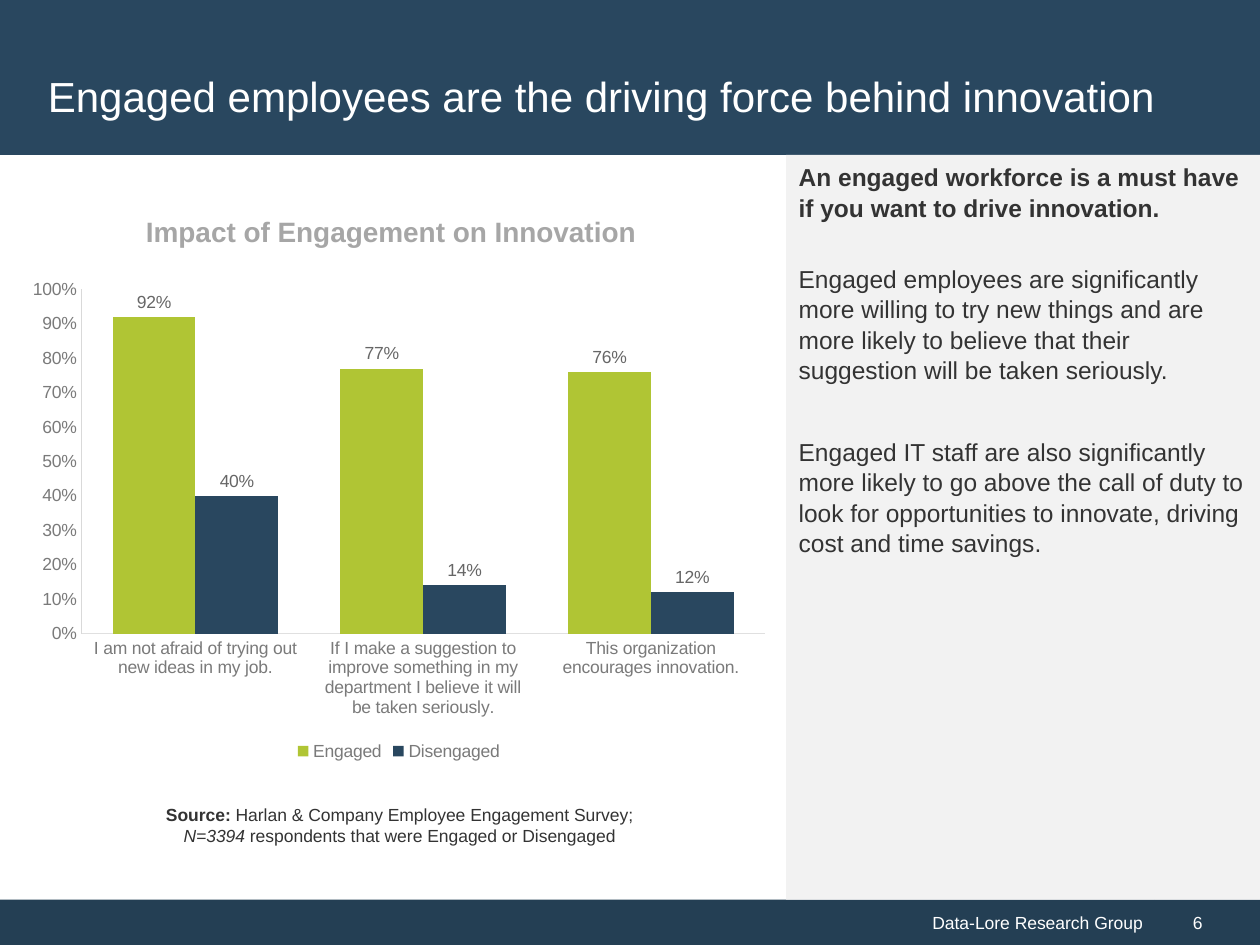
from pptx import Presentation
from pptx.chart.data import CategoryChartData
from pptx.dml.color import RGBColor
from pptx.enum.chart import XL_CHART_TYPE, XL_LABEL_POSITION, XL_LEGEND_POSITION, XL_TICK_MARK
from pptx.enum.shapes import MSO_SHAPE
from pptx.enum.text import MSO_ANCHOR, PP_ALIGN
from pptx.util import Inches, Pt

FONT = "Arial"
WIDTH, HEIGHT = 10, 7.5
HEADER_H, FOOTER_H = 1.23, 0.36
SIDEBAR_X = 6.24
NAVY, DARK_NAVY, GREEN = "29475F", "243F54", "B0C534"
WHITE, PALE, TEXT, AXIS_TEXT = "FFFFFF", "F2F2F2", "333333", "7A7A7A"


def color(hex_value):
    return RGBColor.from_string(hex_value)


def set_font(font, size, hex_value, bold=False, italic=False):
    font.name, font.size = FONT, Pt(size)
    font.bold, font.italic = bold, italic
    font.color.rgb = color(hex_value)


def write(tf, *runs, size=10, hex_value=TEXT, bold=False, align=PP_ALIGN.LEFT,
          anchor=MSO_ANCHOR.TOP, after=0, line=None, new=False):
    """Write one paragraph; a run is text or (text, format overrides)."""
    tf.word_wrap = True
    tf.vertical_anchor = anchor
    p = tf.add_paragraph() if new else tf.paragraphs[0]
    p.alignment, p.space_after, p.line_spacing = align, Pt(after), line
    for run in runs:
        text, extra = (run, {}) if isinstance(run, str) else run
        r = p.add_run()
        r.text = text
        set_font(r.font, size, hex_value, **{"bold": bold, **extra})


def add_panel(s, box, fill):
    sp = s.shapes.add_shape(MSO_SHAPE.RECTANGLE, *map(Inches, box))
    sp.shadow.inherit = False
    sp.fill.solid()
    sp.fill.fore_color.rgb = color(fill)
    sp.line.fill.background()
    return sp


def add_text(s, box, *runs, **fmt):
    tf = s.shapes.add_textbox(*map(Inches, box)).text_frame
    write(tf, *runs, **fmt)


def add_header(s, box, text):
    x, y, w, h = box
    add_panel(s, box, NAVY)
    title = s.shapes.title
    s.shapes._spTree.append(title._element)  # bring in front of the band
    title.left, title.top, title.width, title.height = map(
        Inches, (x + 0.28, y + 0.28, w - 0.57, h - 0.27))
    write(title.text_frame, text, size=24, hex_value=WHITE, anchor=MSO_ANCHOR.MIDDLE)


def add_footer(s, box, owner, number):
    x, y, w, h = box
    split = w * 11 / 12
    name_tf = add_panel(s, (x, y, split, h), DARK_NAVY).text_frame
    write(name_tf, owner, hex_value=WHITE, align=PP_ALIGN.RIGHT, anchor=MSO_ANCHOR.MIDDLE)
    number_tf = add_panel(s, (x + split, y, w - split, h), DARK_NAVY).text_frame
    number_tf.margin_left = Inches(0.3)
    write(number_tf, number, hex_value=WHITE, anchor=MSO_ANCHOR.MIDDLE)


def add_sidebar(s, box, paragraphs):
    tf = add_panel(s, box, PALE).text_frame
    for i, (text, bold, after) in enumerate(paragraphs):
        write(tf, text, size=14, bold=bold, after=after, line=1.04, new=i > 0)


def style_axis(axis, line):
    axis.has_major_gridlines = False
    axis.major_tick_mark = axis.minor_tick_mark = XL_TICK_MARK.NONE
    axis.format.line.color.rgb = color(line)
    axis.format.line.width = Pt(0.75)
    set_font(axis.tick_labels.font, 10, AXIS_TEXT)


def add_column_chart(s, box, categories, series):
    data = CategoryChartData(number_format="0%")
    data.categories = categories
    for name, values, _ in series:
        data.add_series(name, values)
    chart = s.shapes.add_chart(
        XL_CHART_TYPE.COLUMN_CLUSTERED, *map(Inches, box), data).chart
    set_font(chart.font, 10, TEXT)
    chart.has_title = False
    chart.has_legend = True
    chart.legend.position = XL_LEGEND_POSITION.BOTTOM
    chart.legend.include_in_layout = False
    set_font(chart.legend.font, 10, AXIS_TEXT)

    style_axis(chart.category_axis, "E0E0E0")
    axis = chart.value_axis
    style_axis(axis, "D9D9D9")
    axis.minimum_scale, axis.maximum_scale, axis.major_unit = 0, 1, 0.1
    axis.tick_labels.number_format = "0%"
    axis.tick_labels.number_format_is_linked = False

    plot = chart.plots[0]
    plot.gap_width, plot.overlap, plot.vary_by_categories = 75, 0, False
    for ser, (_, _, fill) in zip(plot.series, series):
        ser.format.fill.solid()
        ser.format.fill.fore_color.rgb = color(fill)
        labels = ser.data_labels
        labels.show_value = True
        labels.number_format, labels.number_format_is_linked = "0%", False
        labels.position = XL_LABEL_POSITION.OUTSIDE_END
        set_font(labels.font, 10, "666666")


def add_chart_region(s, box):
    x, y, w, h = box
    add_column_chart(
        s, (x + 0.14, y + 0.91, w - 0.19, 3.94),
        ["I am not afraid of trying out new ideas in my job.",
         "If I make a suggestion to improve something in my department "
         "I believe it will be taken seriously.",
         "This organization encourages innovation."],
        [("Engaged", (0.92, 0.77, 0.76), GREEN),
         ("Disengaged", (0.40, 0.14, 0.12), NAVY)])
    # Source note
    add_text(s, (x + 1.15, y + h - 0.81, 4.04, 0.44),
             ("Source:", {"bold": True}),
             " Harlan & Company Employee Engagement Survey; ",
             ("N=3394 ", {"italic": True}),
             "respondents that were Engaged or Disengaged",
             align=PP_ALIGN.CENTER)
    # Chart heading
    add_text(s, (x + 1.06, y + 0.42, w - 1.11, 0.37),
             "Impact of Engagement on Innovation",
             size=16, hex_value="A6A6A6", bold=True)


def main():
    prs = Presentation()
    prs.slide_width, prs.slide_height = Inches(WIDTH), Inches(HEIGHT)
    s = prs.slides.add_slide(prs.slide_layouts.get_by_name("Title Only"))
    body_h = HEIGHT - HEADER_H - FOOTER_H

    add_footer(s, (0, HEIGHT - FOOTER_H, WIDTH, FOOTER_H), "Data-Lore Research Group", "6")
    add_header(s, (0, 0, WIDTH, HEADER_H),
               "Engaged employees are the driving force behind innovation")
    add_chart_region(s, (0, HEADER_H, SIDEBAR_X, body_h))
    add_sidebar(s, (SIDEBAR_X, HEADER_H, WIDTH - SIDEBAR_X, body_h), [
        ("An engaged workforce is a must have if you want to drive innovation.", True, 23),
        ("Engaged employees are significantly more willing to try new things and are "
         "more likely to believe that their suggestion will be taken seriously.", False, 29),
        ("Engaged IT staff are also significantly more likely to go above the call of duty "
         "to look for opportunities to innovate, driving cost and time savings.", False, 6),
    ])
    prs.save("out.pptx")


if __name__ == "__main__":
    main()
